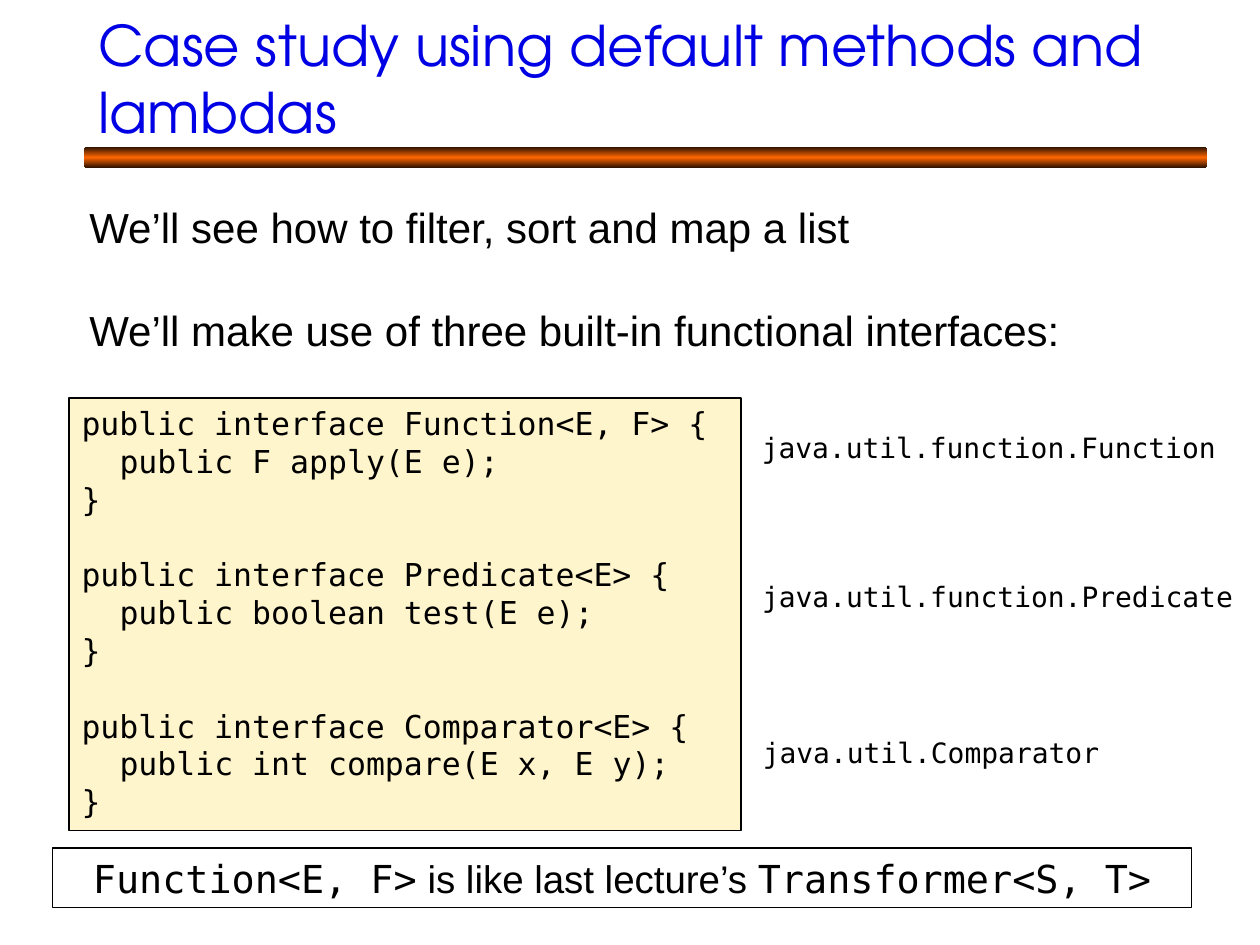
from copy import deepcopy

from pptx import Presentation
from pptx.dml.color import RGBColor
from pptx.enum.shapes import MSO_SHAPE as Shape
from pptx.enum.text import MSO_ANCHOR as Anchor, MSO_AUTO_SIZE as AutoSize, PP_ALIGN as Align
from pptx.util import Pt

COLORS = {
    "title": "0000E5",
    "text": "000000",
    "line": "000000",
    "code": "FFF5CC",
    "note": "FFFFFF",
    "bar_edge": "2A1100",
    "bar_middle": "FF6600",
}
SANS, MONO, DISPLAY = "Arial", "DejaVu Sans Mono", "TeX Gyre Adventor"
CODE_LINE = 21.6
CODE_INDENT = 21.7  # two characters of 18 pt code

INTRO = [
    "We’ll see how to filter, sort and map a list",
    "We’ll make use of three built-in functional interfaces:",
]
INTERFACES = [
    ("Function<E, F>", "public F apply(E e);"),
    ("Predicate<E>", "public boolean test(E e);"),
    ("Comparator<E>", "public int compare(E x, E y);"),
]
LABELS = [
    ("java.util.function.Function", (426, 242.5, 278, 26.5)),
    ("java.util.function.Predicate", (421, 327.5, 298, 26.5)),
    ("java.util.Comparator", (383, 417, 298, 26.5)),
]
NOTE = [("Function<E, F>", MONO), (" is like last lecture’s ", SANS), ("Transformer<S, T>", MONO)]


def rgb(name):
    return RGBColor.from_string(COLORS[name])


def pts(box):
    return [Pt(v) for v in box]


def add_run(p, text, size, font, color="text"):
    r = p.add_run()
    r.text = text
    r.font.size, r.font.name = Pt(size), font
    r.font.color.rgb = rgb(color)


def set_frame(tf, anchor=Anchor.TOP):
    tf.word_wrap = True
    tf.auto_size = AutoSize.NONE
    tf.vertical_anchor = anchor


def paragraphs(tf, count):
    return [tf.paragraphs[0]] + [tf.add_paragraph() for _ in range(count - 1)]


def add_text_frame(s, box):
    tf = s.shapes.add_textbox(*pts(box)).text_frame
    set_frame(tf)
    return tf


def add_panel(s, box, fill, anchor):
    sp = s.shapes.add_shape(Shape.RECTANGLE, *pts(box))
    sp.shadow.inherit = False
    sp.fill.solid()
    sp.fill.fore_color.rgb = rgb(fill)
    sp.line.color.rgb = rgb("line")
    sp.line.width = Pt(0.75)
    set_frame(sp.text_frame, anchor)
    return sp.text_frame


def add_title(s, box, text):
    sp = s.shapes.title
    sp.left, sp.top, sp.width, sp.height = pts(box)
    set_frame(sp.text_frame, Anchor.MIDDLE)
    p = sp.text_frame.paragraphs[0]
    p.alignment = Align.LEFT
    add_run(p, text, 32, DISPLAY, "title")


def add_bar(s, box):
    """Rounded rule, dark at both long edges and bright along the middle."""
    sp = s.shapes.add_shape(Shape.ROUNDED_RECTANGLE, *pts(box))
    sp.shadow.inherit = False
    sp.line.fill.background()
    sp.fill.gradient()
    sp.fill.gradient_angle = 90
    edge, middle = sp.fill.gradient_stops
    edge.color.rgb, edge.position = rgb("bar_edge"), 0
    middle.color.rgb, middle.position = rgb("bar_middle"), 0.5
    first, second = sp.element.xpath(".//a:gs")
    last = deepcopy(first)
    last.set("pos", "100000")
    second.addnext(last)


def add_intro(s, box):
    tf = add_text_frame(s, box)
    for i, (p, text) in enumerate(zip(paragraphs(tf, len(INTRO)), INTRO)):
        p.space_before = Pt(30 if i else 0)
        add_run(p, text, 24, SANS)


def add_code(s, box):
    tf = add_panel(s, box, "code", Anchor.TOP)
    lines = []
    for name, method in INTERFACES:
        lines += [f"public interface {name} {{", method, "}"]
    for i, (p, text) in enumerate(zip(paragraphs(tf, len(lines)), lines)):
        p.alignment = Align.LEFT
        p.line_spacing = Pt(CODE_LINE)
        p.space_before = Pt(CODE_LINE if i and i % 3 == 0 else 0)
        if i % 3 == 1:
            p._p.get_or_add_pPr().set("marL", str(Pt(CODE_INDENT)))
        add_run(p, text, 18, MONO)


def add_label(s, box, text):
    p = add_text_frame(s, box).paragraphs[0]
    p.alignment = Align.CENTER
    add_run(p, text, 16, MONO)


def add_note(s, box):
    p = add_panel(s, box, "note", Anchor.MIDDLE).paragraphs[0]
    p.alignment = Align.CENTER
    for text, font in NOTE:
        add_run(p, text, 22, font)


def main():
    prs = Presentation()
    prs.slide_width, prs.slide_height = Pt(720), Pt(540)
    s = prs.slides.add_slide(prs.slide_layouts[5])
    add_bar(s, (48, 84, 642, 12))
    add_title(s, (49, 8.5, 642, 72), "Case study using default methods and lambdas")
    add_intro(s, (44, 111.5, 648, 94.5))
    for text, box in LABELS:
        add_label(s, box, text)
    add_code(s, (39.5, 227.5, 384, 247))
    add_note(s, (30, 484.5, 651, 34))
    prs.save("out.pptx")


if __name__ == "__main__":
    main()
